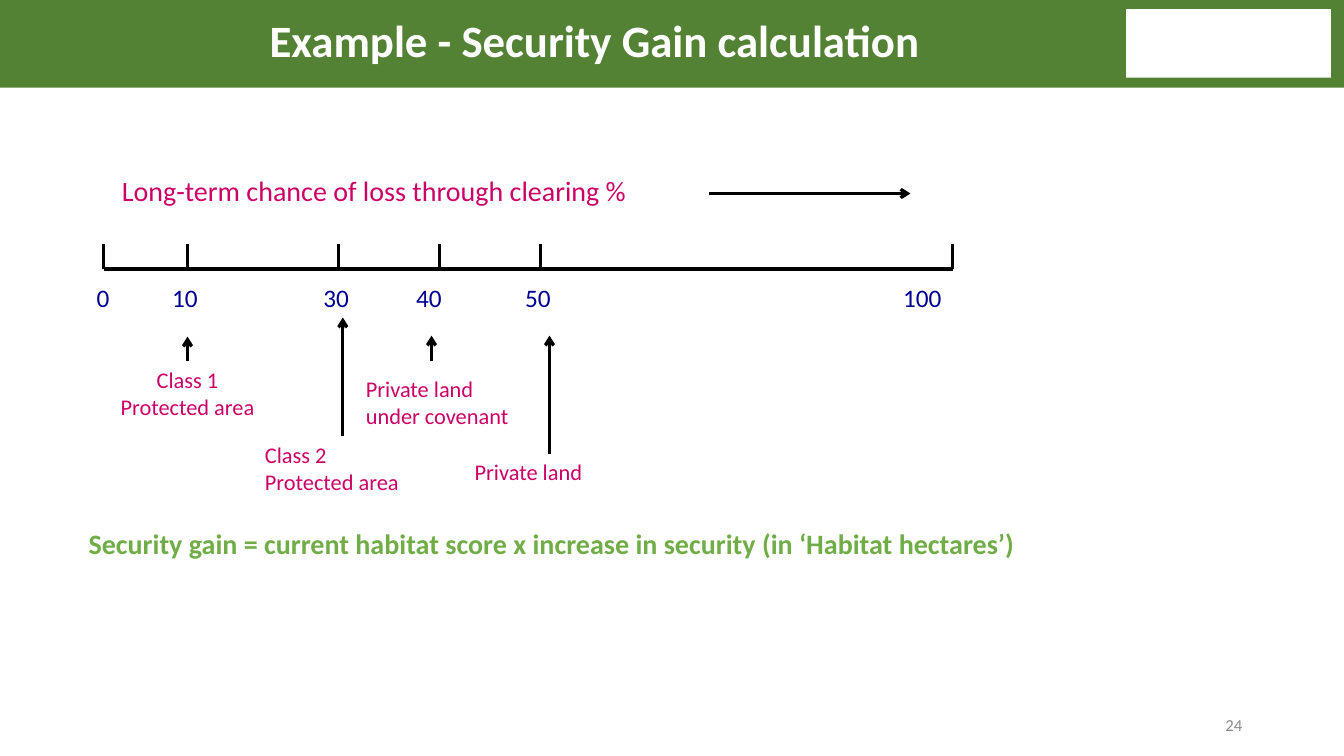
from lxml import etree
from pptx import Presentation
from pptx.dml.color import RGBColor
from pptx.enum.shapes import MSO_CONNECTOR, MSO_SHAPE
from pptx.enum.text import MSO_ANCHOR, MSO_AUTO_SIZE, PP_ALIGN
from pptx.oxml.ns import qn
from pptx.util import Emu, Pt

PX = 9144  # 100 px to the inch
BLACK = RGBColor(0x00, 0x00, 0x00)
WHITE = RGBColor(0xFF, 0xFF, 0xFF)
GREY = RGBColor(0x8C, 0x8C, 0x8C)
DARK_GREEN = RGBColor(0x54, 0x82, 0x35)
GREEN = RGBColor(0x70, 0xAD, 0x47)
NAVY = RGBColor(0x00, 0x00, 0x90)
MAGENTA = RGBColor(0xCC, 0x00, 0x66)


def px(*lengths):
    return [Emu(length * PX) for length in lengths]


def write_text(shape, text, size=16, color=MAGENTA, bold=False,
               align=PP_ALIGN.LEFT, anchor=MSO_ANCHOR.TOP):
    frame = shape.text_frame
    frame.text = text
    frame.word_wrap = True
    frame.auto_size = MSO_AUTO_SIZE.NONE
    frame.vertical_anchor = anchor
    for paragraph in frame.paragraphs:
        paragraph.alignment = align
        paragraph.font.name = "Calibri"
        paragraph.font.size = Pt(size)
        paragraph.font.bold = bold
        paragraph.font.color.rgb = color


class SlideBuilder:
    def __init__(self, slide):
        self.slide = slide
        self.shapes = slide.shapes

    def rectangle(self, box, color):
        shape = self.shapes.add_shape(MSO_SHAPE.RECTANGLE, *px(*box))
        shape.shadow.inherit = False
        shape.fill.solid()
        shape.fill.fore_color.rgb = color
        shape.line.fill.background()

    def title(self, box, text):
        title = self.shapes.title
        title.left, title.top, title.width, title.height = px(*box)
        write_text(title, text, size=32, color=WHITE, bold=True,
                   align=PP_ALIGN.CENTER)
        # Bring the title in front of the header bar
        title.element.getparent().append(title.element)

    def text(self, box, text, **text_format):
        shape = self.shapes.add_textbox(*px(*box))
        write_text(shape, text, **text_format)
        return shape

    def line(self, start, end, width=2.25, arrow=False, source=None):
        connector = self.shapes.add_connector(
            MSO_CONNECTOR.STRAIGHT, *px(*start, *end))
        if source is not None:
            connector.begin_connect(source, 0)
        connector.line.color.rgb = BLACK
        connector.line.width = Pt(width)
        if arrow:
            line = connector.line._get_or_add_ln()
            etree.SubElement(line, qn("a:tailEnd"), type="arrow")
        etree.SubElement(connector.element.spPr, qn("a:effectLst"))


def main():
    presentation = Presentation()
    presentation.slide_width, presentation.slide_height = px(1333, 750)
    title_only = presentation.slide_layouts[5]
    builder = SlideBuilder(presentation.slides.add_slide(title_only))

    # Header and slide number
    builder.rectangle((0, -3, 1333, 90), DARK_GREEN)
    builder.rectangle((1117, 9, 203, 68), WHITE)
    builder.title((80, 8, 1020, 64), "Example - Security Gain calculation")
    builder.text((1154, 704, 88, 31), "24", size=12, color=GREY,
                 align=PP_ALIGN.RIGHT, anchor=MSO_ANCHOR.MIDDLE)

    # Scale: tick position, label, label left and width
    builder.text((111, 167, 608, 44),
                 "Long-term chance of loss through clearing %", size=20)
    builder.line((703, 192), (903, 192), arrow=True)
    builder.line((103, 267), (945, 267), width=3)
    ticks = [
        (103, "0", 86, 42),
        (186, "10", 161, 58),
        (336, "30", 311, 58),
        (436, "40", 403, 58),
        (536, "50", 511, 58),
        (945, "100", 886, 75),
    ]
    for x, label, left, width in ticks:
        builder.line((x, 242), (x, 267))
        builder.text((left, 275, width, 40), label, size=18, color=NAVY)

    # Land classes: text, box, alignment, arrow x, start, end, joined to box
    classes = [
        ("Class 1\nProtected area", (103, 358, 166, 98), PP_ALIGN.CENTER,
         186, 358, 334, True),
        ("Class 2\nProtected area", (253, 433, 174, 64), PP_ALIGN.LEFT,
         340, 433, 315, True),
        ("Private land\nunder covenant", (353, 367, 175, 64), PP_ALIGN.LEFT,
         428, 358, 333, False),
        ("Private land", (461, 450, 150, 37), PP_ALIGN.LEFT,
         545, 450, 333, False),
    ]
    for text, box, align, x, start, end, joined in classes:
        label = builder.text(box, text, align=align)
        builder.line((x, start), (x, end), arrow=True,
                     source=label if joined else None)

    # Formula
    builder.text((78, 517, 971, 44),
                 "Security gain = current habitat score x increase in security "
                 "(in ‘Habitat hectares’)", size=20, color=GREEN, bold=True)

    presentation.save("out.pptx")


if __name__ == "__main__":
    main()
